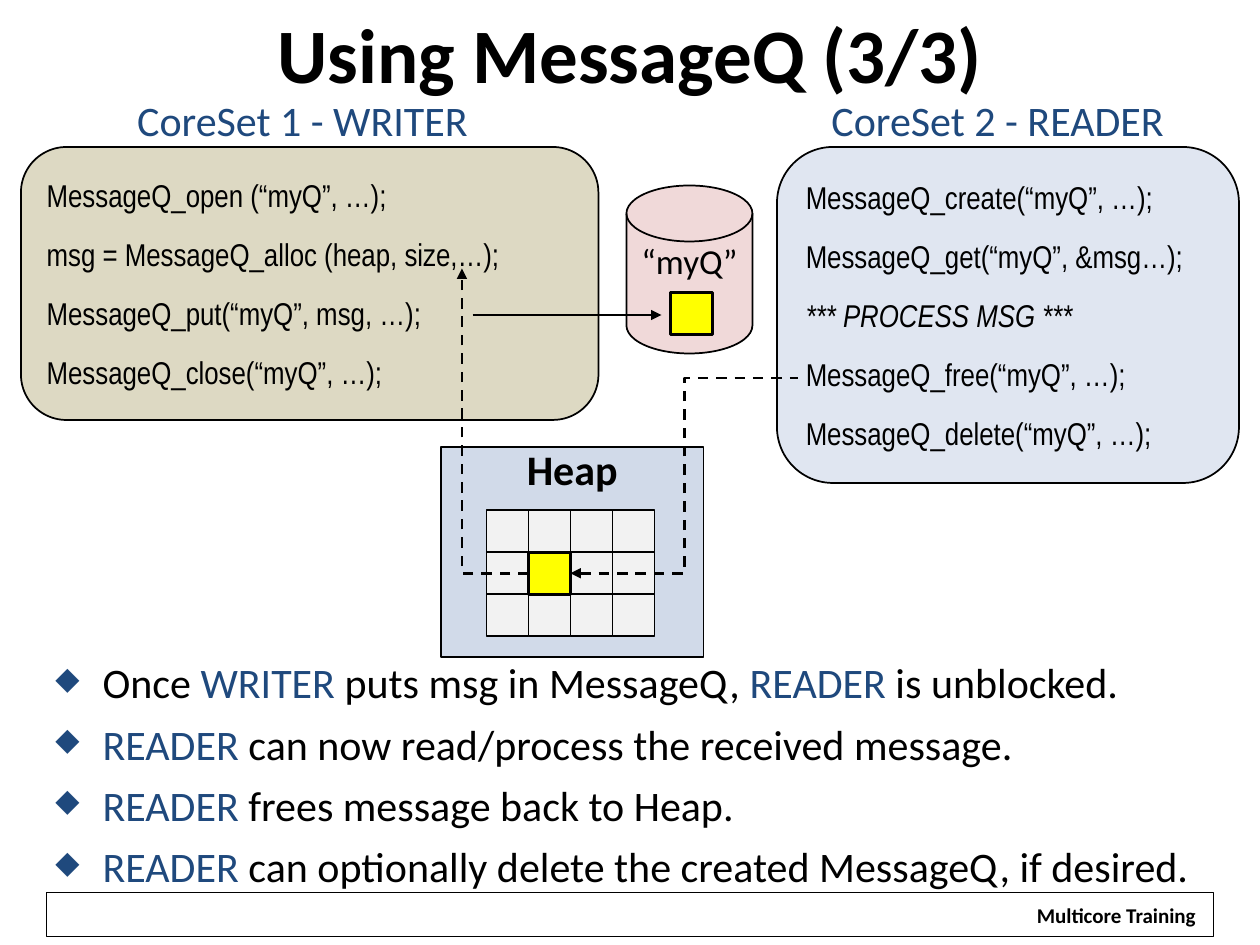
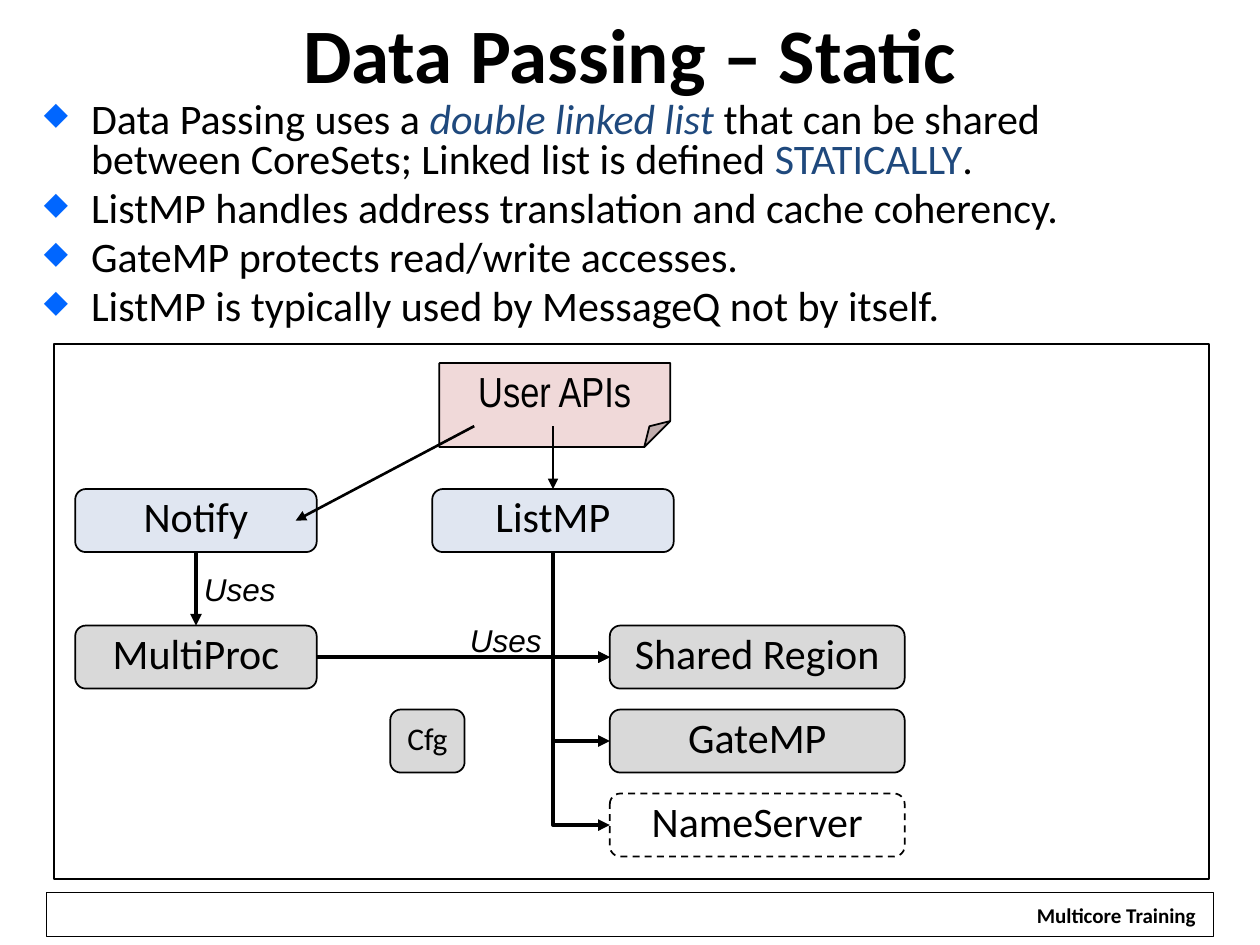
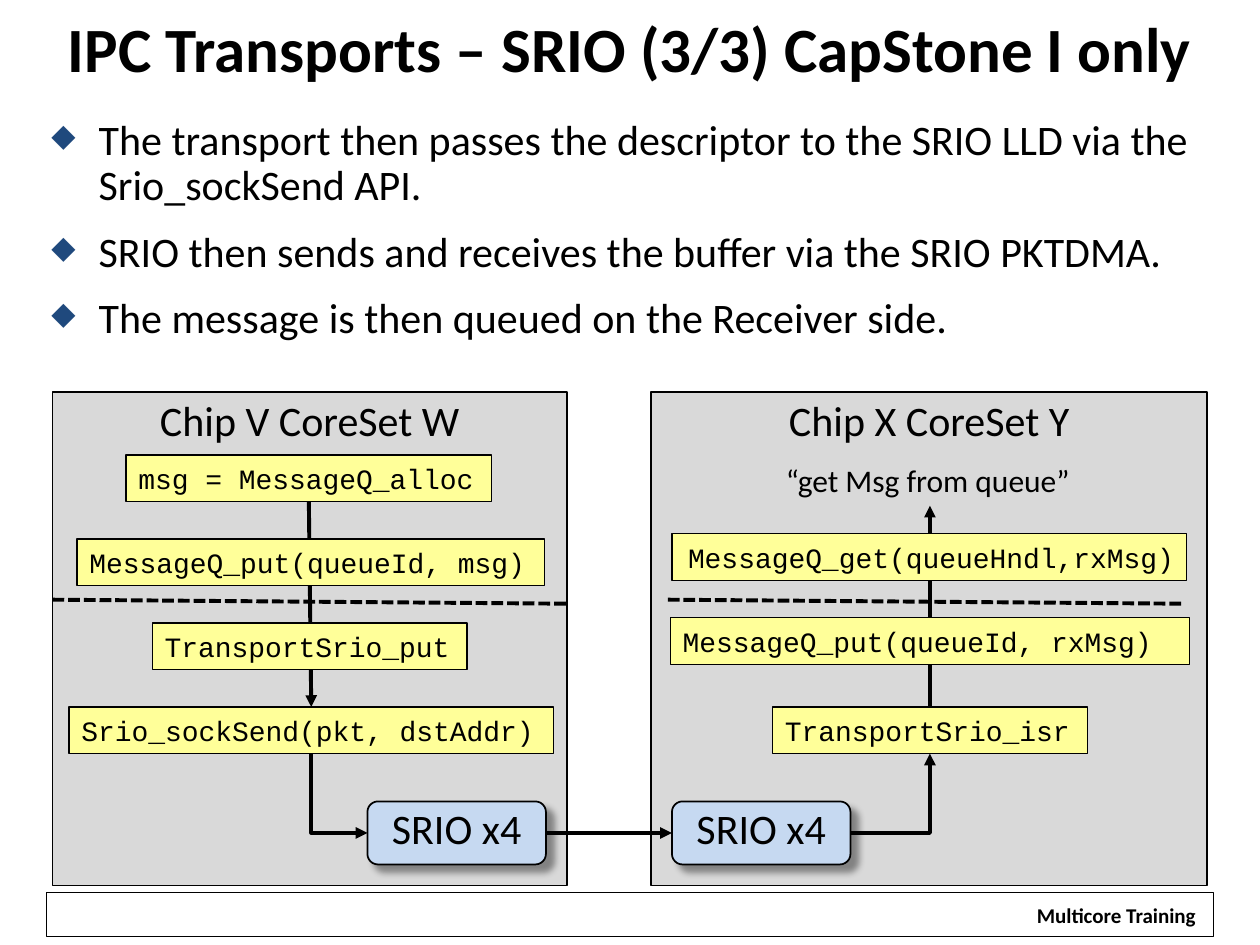
import pptx
import pptx.dml.color
import pptx.enum.dml
import pptx.enum.shapes
import pptx.enum.text
import pptx.oxml
import pptx.oxml.ns
import pptx.util
from lxml import etree

Pt = pptx.util.Pt
SHAPE = pptx.enum.shapes.MSO_SHAPE
CONNECTOR = pptx.enum.shapes.MSO_CONNECTOR
DASH = pptx.enum.dml.MSO_LINE
ALIGN = pptx.enum.text.PP_ALIGN
ANCHOR = pptx.enum.text.MSO_ANCHOR
TOP, LEFT, BOTTOM, RIGHT = range(4)

# Shared look
BLACK, WHITE, NAVY, BRIGHT_BLUE = "000000", "FFFFFF", "1F497D", "0066FF"
PINK, PALE_BLUE, TAN, GREY = "F0D9D9", "E0E6F1", "DDD9C3", "D9D9D9"
HEAP_BLUE, CELL_GREY, YELLOW = "D1DAE9", "F2F2F2", "FFFF00"
CODE_YELLOW, PORT_BLUE = "FFFF99", "C6D9F1"
BODY, NARROW, SANS, CODE = "Calibri", "Arial Narrow", "Arial", "Courier New"


def color(value):
    return pptx.dml.color.RGBColor.from_string(value)


def add_xml(parent, tag, **attributes):
    element = etree.SubElement(parent, pptx.oxml.ns.qn(tag))
    for name, value in attributes.items():
        element.set(name, str(value))
    return element


def style_run(run, size, font=BODY, ink=BLACK, bold=False, italic=False):
    run.font.size = Pt(size)
    run.font.name = font
    run.font.color.rgb = color(ink)
    run.font.bold = bold
    run.font.italic = italic


def set_text(shape, text, size=24, font=BODY, ink=BLACK, bold=False, italic=False,
             align=ALIGN.CENTER, anchor=ANCHOR.MIDDLE, spacing=1.0, before=0, inset_top=3.6):
    frame = shape.text_frame
    frame.word_wrap = True
    frame.vertical_anchor = anchor
    frame.margin_top = Pt(inset_top)
    frame.text = text
    for index, paragraph in enumerate(frame.paragraphs):
        paragraph.alignment = align
        paragraph.line_spacing = spacing
        paragraph.space_before = Pt(before if index else 0)
        for run in paragraph.runs:
            style_run(run, size, font, ink, bold, italic)


def add_box(slide, kind, at, fill=None, width=1, dash=None):
    shape = slide.shapes.add_shape(kind, *map(Pt, at))
    shape.shadow.inherit = False
    if fill:
        shape.fill.solid()
        shape.fill.fore_color.rgb = color(fill)
    else:
        shape.fill.background()
    shape.line.color.rgb = color(BLACK)
    shape.line.width = Pt(width)
    if dash:
        shape.line.dash_style = dash
    return shape


def add_label(slide, at, text, **style):
    box = slide.shapes.add_textbox(*map(Pt, at))
    set_text(box, text, **style)
    return box


def add_node(slide, at, text, fill, dash=None, size=24):
    node = add_box(slide, SHAPE.ROUNDED_RECTANGLE, at, fill, dash=dash)
    set_text(node, text, size=size, spacing=0.8)
    return node


def add_code(slide, at, text, align=ALIGN.LEFT):
    box = add_box(slide, SHAPE.RECTANGLE, at, CODE_YELLOW, 0.75)
    set_text(box, text, size=16, font=CODE, align=align)
    return box


def add_bullets(slide, at, items, marker=NAVY, spacing=0.8, before=12):
    """Parts of an item between asterisks are navy; a vertical tab breaks the line."""
    box = slide.shapes.add_textbox(*map(Pt, at))
    frame = box.text_frame
    frame.word_wrap = True
    frame.vertical_anchor = ANCHOR.MIDDLE
    for index, item in enumerate(items):
        paragraph = frame.add_paragraph() if index else frame.paragraphs[0]
        paragraph.line_spacing = spacing
        paragraph.space_before = Pt(before if index else 0)
        properties = paragraph._p.get_or_add_pPr()
        properties.set("marL", str(Pt(27)))
        properties.set("indent", str(-Pt(27)))
        add_xml(add_xml(properties, "a:buClr"), "a:srgbClr", val=marker)
        add_xml(properties, "a:buSzPct", val=75000)
        add_xml(properties, "a:buChar", char="◆")
        for part, words in enumerate(item.split("*")):
            for row, line in enumerate(words.split("\v")):
                if row:
                    paragraph.add_line_break()
                if line:
                    run = paragraph.add_run()
                    run.text = line
                    style_run(run, 24, ink=NAVY if part % 2 else BLACK)
    return box


def add_line(slide, start, end, width=2.25, dash=None, head=False, tail=False,
             kind=CONNECTOR.STRAIGHT):
    line = slide.shapes.add_connector(kind, *map(Pt, (*start, *end)))
    line.line.color.rgb = color(BLACK)
    line.line.width = Pt(width)
    if dash:
        line.line.dash_style = dash
    outline = line.line._get_or_add_ln()
    if head:
        add_xml(outline, "a:headEnd", type="triangle")
    if tail:
        add_xml(outline, "a:tailEnd", type="triangle")
    add_xml(line._element.spPr, "a:effectLst")
    return line


def add_corner(slide, start, end, **style):
    """One bend: leaves the start horizontally, reaches the end vertically."""
    line = add_line(slide, start, end, kind=CONNECTOR.ELBOW, **style)
    line._element.spPr.find(pptx.oxml.ns.qn("a:prstGeom")).set("prst", "bentConnector2")


def join(slide, first, first_side, second, second_side):
    line = add_line(slide, (0, 0), (0, 0), tail=True)
    line.begin_connect(first, first_side)
    line.end_connect(second, second_side)


def add_drop_shadow(shape):
    effects = shape._element.spPr.find(pptx.oxml.ns.qn("a:effectLst"))
    shadow = add_xml(effects, "a:outerShdw", blurRad=Pt(4), dist=Pt(6), dir=45 * 60000,
                     algn="tl", rotWithShape=0)
    add_xml(add_xml(shadow, "a:srgbClr", val=BLACK), "a:alpha", val=40000)


def set_fold(shape, share):
    values = shape._element.spPr.find(".//" + pptx.oxml.ns.qn("a:avLst"))
    add_xml(values, "a:gd", name="adj", fmla=f"val {round(share * 100000)}")


def start_slide(presentation, title, at=(36, 0, 648, 60), size=44):
    slide = presentation.slides.add_slide(presentation.slide_layouts[6])
    add_box(slide, SHAPE.RECTANGLE, (26.6, 510, 666.8, 25), width=0.75)
    add_label(slide, (584.6, 511.9, 106.6, 21.6), "Multicore Training", size=12, bold=True)
    add_label(slide, at, title, size=size, bold=True)
    return slide


def build_message_queue(presentation):
    slide = start_slide(presentation, "Using MessageQ (3/3)")

    # Queue, reader and writer
    queue = add_box(slide, SHAPE.FLOWCHART_MAGNETIC_DISK, (358, 106, 72, 96), PINK)
    set_text(queue, "“myQ”", size=20, anchor=ANCHOR.TOP, spacing=0.8)
    programs = [
        ((444, 84, 264, 192), PALE_BLUE,
         ["MessageQ_create(“myQ”, …);", "MessageQ_get(“myQ”, &msg…);", "*** PROCESS MSG ***",
          "MessageQ_free(“myQ”, …);", "MessageQ_delete(“myQ”, …);"]),
        ((12, 84, 330, 156), TAN,
         ["MessageQ_open (“myQ”, …);", "msg = MessageQ_alloc (heap, size,…);",
          "MessageQ_put(“myQ”, msg, …);", "MessageQ_close(“myQ”, …);"]),
    ]
    for at, fill, calls in programs:
        program = add_box(slide, SHAPE.ROUNDED_RECTANGLE, at, fill)
        set_text(program, "\n".join(calls), size=18, font=NARROW, align=ALIGN.LEFT, before=12)
        for paragraph in program.text_frame.paragraphs:
            paragraph.runs[0].font.italic = paragraph.text.startswith("***")

    # Heap with one allocated cell
    heap = add_box(slide, SHAPE.RECTANGLE, (252, 255.6, 150, 120), HEAP_BLUE)
    set_text(heap, "Heap", bold=True, anchor=ANCHOR.TOP, spacing=0.8)
    cell = 24
    left, top = 278, 291.6
    for row in range(3):
        for column in range(4):
            if (row, column) != (1, 1):
                add_box(slide, SHAPE.RECTANGLE,
                        (left + column * cell, top + row * cell, cell, cell), CELL_GREY)
    for message_left, message_top in ((left + cell, top + cell), (383, 167)):
        add_box(slide, SHAPE.RECTANGLE, (message_left, message_top, cell, cell), YELLOW, 1.5)

    # Message flow
    middle = top + 1.5 * cell
    add_corner(slide, (left + cell, middle), (264, 153.4), width=1.5, dash=DASH.DASH, tail=True)
    add_line(slide, (270, 180), (378, 180), width=1.5, tail=True)
    add_line(slide, (left + 2 * cell, middle), (456, 216), width=1.5, dash=DASH.DASH,
             head=True, kind=CONNECTOR.ELBOW)

    add_bullets(slide, (24.5, 376.6, 672, 136.8), [
        "Once *WRITER* puts msg in MessageQ, *READER* is unblocked.",
        "*READER* can now read/process the received message.",
        "*READER* frees message back to Heap.",
        "*READER* can optionally delete the created MessageQ, if desired."])
    for x, text in ((71.3, "CoreSet 1 - WRITER"), (468, "CoreSet 2 - READER")):
        add_label(slide, (x, 50.4, 212, 36), text, ink=NAVY, align=ALIGN.LEFT)


def build_data_passing(presentation):
    slide = start_slide(presentation, "Data Passing – Static")
    bullets = add_bullets(slide, (18, 54, 612, 139), [
        "Data Passing uses a *double linked list *that can be shared \v"
        "between CoreSets; Linked list is defined *STATICALLY*.",
        "ListMP handles address translation and cache coherency.",
        "GateMP protects read/write accesses.",
        "ListMP is typically used by MessageQ not by itself."], BRIGHT_BLUE, before=5)
    bullets.text_frame.paragraphs[0].runs[1].font.italic = True

    # Modules
    add_box(slide, SHAPE.RECTANGLE, (31, 196.5, 660, 306), WHITE)
    notify = add_node(slide, (43, 279.5, 138, 36), "Notify", PALE_BLUE)
    multi_proc = add_node(slide, (43, 357.5, 138, 36), "MultiProc", GREY)
    user_apis = add_box(slide, SHAPE.FOLDED_CORNER, (251, 207.5, 132, 48), PINK)
    set_fold(user_apis, 0.31)
    set_text(user_apis, "User APIs", font=NARROW, anchor=ANCHOR.TOP, spacing=0.8, inset_top=7.2)
    list_mp = add_node(slide, (247, 279.5, 138, 36), "ListMP", PALE_BLUE)
    services = [("Shared Region", GREY, None), ("GateMP", GREY, None),
                ("NameServer", WHITE, DASH.DASH)]
    nodes = [add_node(slide, (348.5, 357.5 + 48 * index, 168.5, 36), text, fill, dash)
             for index, (text, fill, dash) in enumerate(services)]
    add_node(slide, (223, 405.5, 42.5, 36), "Cfg", GREY, size=18)
    for x, y in ((109.4, 322), (261.4, 351)):
        add_label(slide, (x, y, 58.3, 29), "Uses", size=18, font=SANS, italic=True,
                  align=ALIGN.LEFT)

    # Dependencies
    join(slide, notify, BOTTOM, multi_proc, TOP)
    join(slide, multi_proc, RIGHT, nodes[0], LEFT)
    for index in range(len(nodes)):
        add_corner(slide, (348.5, 375.5 + 48 * index), (316, 315.5), head=True)
    add_line(slide, (271, 243.5), (169, 297.5), width=1.5, tail=True)
    call = add_line(slide, (316, 243.5), (316, 279.5), width=1.5, tail=True)
    call.end_connect(list_mp, TOP)


def build_transport(presentation):
    slide = start_slide(presentation, "IPC Transports – SRIO (3/3) CapStone I only",
                        (0, -2, 720, 58), 36)
    add_bullets(slide, (22.3, 64, 672.5, 136), [
        "The transport then passes the descriptor to the SRIO LLD via the Srio_sockSend API.",
        "SRIO then sends and receives the buffer via the SRIO PKTDMA.",
        "The message is then queued on the Receiver side."], spacing=0.9)

    # Chips
    for x, width, text in ((30, 294, "Chip V CoreSet W"), (372, 318, "Chip X CoreSet Y")):
        chip = add_box(slide, SHAPE.RECTANGLE, (x, 224, width, 282), GREY)
        set_text(chip, text, anchor=ANCHOR.TOP, spacing=0.8, inset_top=7.2)

    # Sending calls
    allocate = add_code(slide, (72, 260, 209, 26.6), "msg = MessageQ_alloc")
    send = add_code(slide, (39.4, 404, 277, 26.6), "Srio_sockSend(pkt, dstAddr)")
    join(slide, allocate, BOTTOM, send, TOP)
    add_code(slide, (44, 308, 267, 26.6), "MessageQ_put(queueId, msg)")
    add_code(slide, (87, 356, 180, 26.6), "TransportSrio_put")

    # Receiving calls
    receive = add_code(slide, (441.4, 404, 180, 26.6), "TransportSrio_isr")
    fetch = add_label(slide, (442, 260, 178.8, 29), "“get Msg from queue”", size=18,
                      align=ALIGN.LEFT)
    join(slide, receive, TOP, fetch, BOTTOM)
    add_code(slide, (384, 305, 294, 26.6), "MessageQ_get(queueHndl,rxMsg)", ALIGN.RIGHT)
    add_code(slide, (383, 353, 296.6, 26.6), "MessageQ_put(queueId, rxMsg)")

    # Link between the chips
    ports = [add_node(slide, (x, 458, 102, 36), "SRIO x4", PORT_BLUE) for x in (210, 384)]
    for port in ports:
        add_drop_shadow(port)
    join(slide, ports[0], RIGHT, ports[1], LEFT)
    add_corner(slide, (210, 476), (178, 430.6), head=True)
    add_corner(slide, (486, 476), (531.4, 430.6), tail=True)
    for x in (30, 381.6):
        add_line(slide, (x, 342.7), (x + 295, 345), dash=DASH.SQUARE_DOT)


def main():
    presentation = pptx.Presentation()
    presentation.slide_width = Pt(720)
    presentation.slide_height = Pt(540)
    build_message_queue(presentation)
    build_data_passing(presentation)
    build_transport(presentation)
    presentation.save("out.pptx")


if __name__ == "__main__":
    main()
